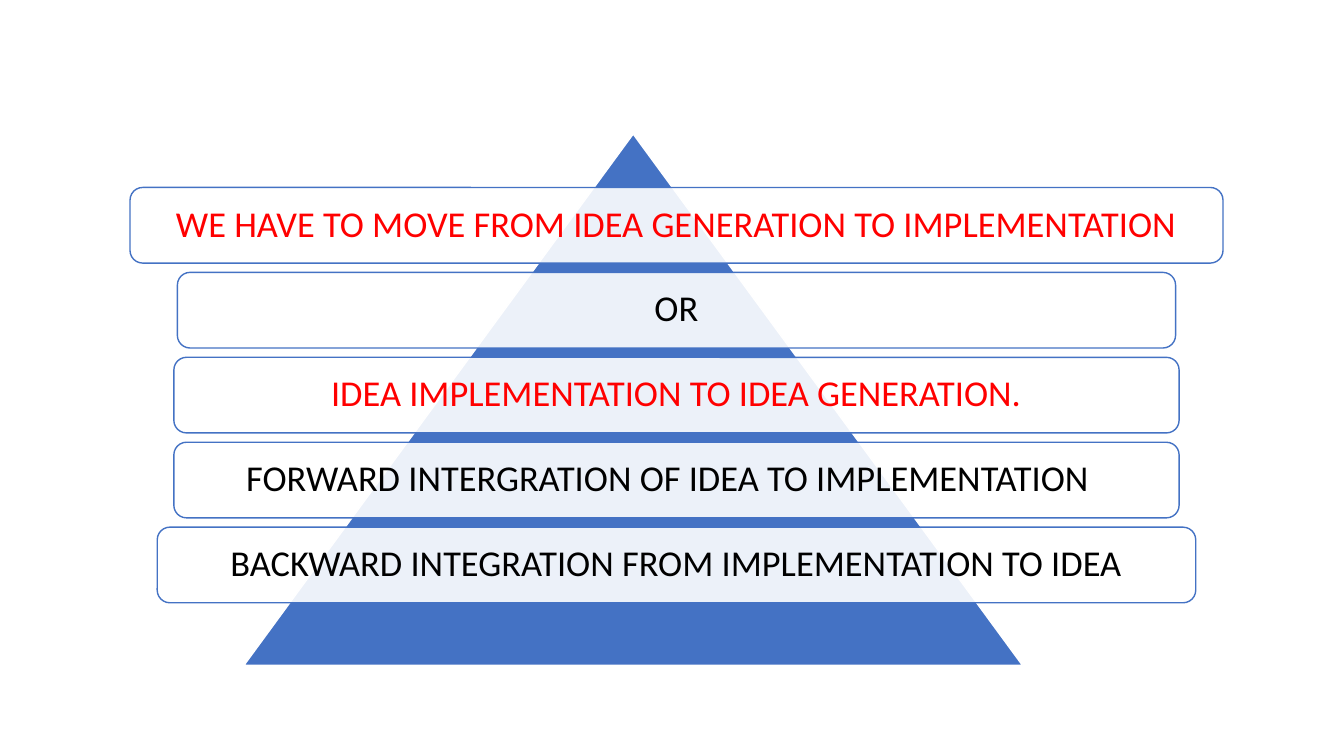
from dataclasses import dataclass

from lxml.etree import SubElement
from pptx import Presentation
from pptx.dml.color import RGBColor
from pptx.enum.shapes import MSO_SHAPE
from pptx.enum.text import MSO_ANCHOR, PP_ALIGN
from pptx.oxml.ns import qn
from pptx.util import Inches, Pt


@dataclass(frozen=True)
class Theme:
    blue: RGBColor = RGBColor(0x44, 0x72, 0xC4)
    white: RGBColor = RGBColor(0xFF, 0xFF, 0xFF)
    red: RGBColor = RGBColor(0xFF, 0x00, 0x00)
    black: RGBColor = RGBColor(0x00, 0x00, 0x00)
    band_opacity: int = 90
    font: str = "Calibri"
    text_size: int = 26
    line_width: int = 1


@dataclass(frozen=True)
class Box:
    left: float
    top: float
    width: float
    height: float


THEME = Theme()
BAND_HEIGHT = 0.75
BAND_INSET = 0.11
BANDS = [
    ("WE HAVE TO MOVE FROM IDEA GENERATION TO IMPLEMENTATION", 10.84, THEME.red, 0),
    ("OR", 9.9, THEME.black, 0),
    ("IDEA IMPLEMENTATION TO IDEA GENERATION.", 9.97, THEME.red, 0),
    ("FORWARD INTERGRATION OF IDEA TO IMPLEMENTATION", 9.97, THEME.black, 0.17),
    ("BACKWARD INTEGRATION FROM IMPLEMENTATION TO IDEA", 10.3, THEME.black, 0),
]


def add_outlined_shape(page, kind, box, fill, line):
    shape = page.shapes.add_shape(
        kind, Inches(box.left), Inches(box.top), Inches(box.width), Inches(box.height)
    )
    shape.shadow.inherit = False
    shape.fill.solid()
    shape.fill.fore_color.rgb = fill
    shape.line.color.rgb = line
    shape.line.width = Pt(THEME.line_width)
    return shape


def set_opacity(shape, percent):
    color = shape._element.spPr.find(qn("a:solidFill")).find(qn("a:srgbClr"))
    SubElement(color, qn("a:alpha")).set("val", str(percent * 1000))


def add_band(page, box, text, color, extra_right):
    band = add_outlined_shape(
        page, MSO_SHAPE.ROUNDED_RECTANGLE, box, THEME.white, THEME.blue
    )
    set_opacity(band, THEME.band_opacity)
    frame = band.text_frame
    frame.text = text
    frame.word_wrap = True
    frame.vertical_anchor = MSO_ANCHOR.MIDDLE
    frame.margin_left = frame.margin_top = frame.margin_bottom = Inches(BAND_INSET)
    frame.margin_right = Inches(BAND_INSET + extra_right)
    para = frame.paragraphs[0]
    para.alignment = PP_ALIGN.CENTER
    para.line_spacing = 0.9
    span = para.runs[0]
    span.font.name = THEME.font
    span.font.size = Pt(THEME.text_size)
    span.font.color.rgb = color


def add_band_stack(page, box):
    pitch = (box.height - BAND_HEIGHT) / (len(BANDS) - 1)
    for index, (text, width, color, extra_right) in enumerate(BANDS):
        left = box.left + (box.width - width) / 2
        band_box = Box(left, box.top + index * pitch, width, BAND_HEIGHT)
        add_band(page, band_box, text, color, extra_right)


def add_pyramid(page, box):
    add_outlined_shape(
        page, MSO_SHAPE.ISOSCELES_TRIANGLE, box, THEME.blue, THEME.white
    )


def main():
    deck = Presentation()
    deck.slide_width = Inches(13.33)
    deck.slide_height = Inches(7.5)
    page = deck.slides.add_slide(deck.slide_layouts[6])
    add_pyramid(page, Box(2.42, 1.33, 7.72, 5.27))
    add_band_stack(page, Box(1.29, 1.86, 10.84, 4.12))
    deck.save("out.pptx")


if __name__ == "__main__":
    main()
